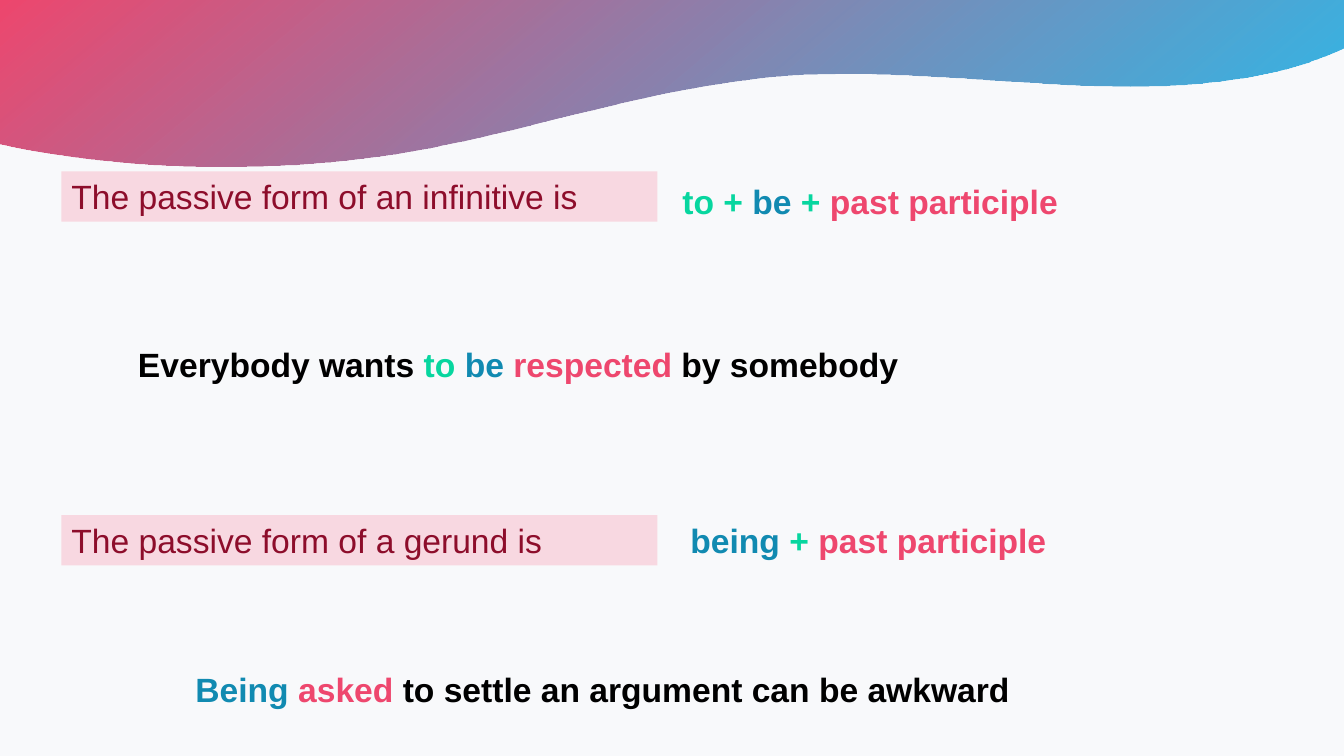
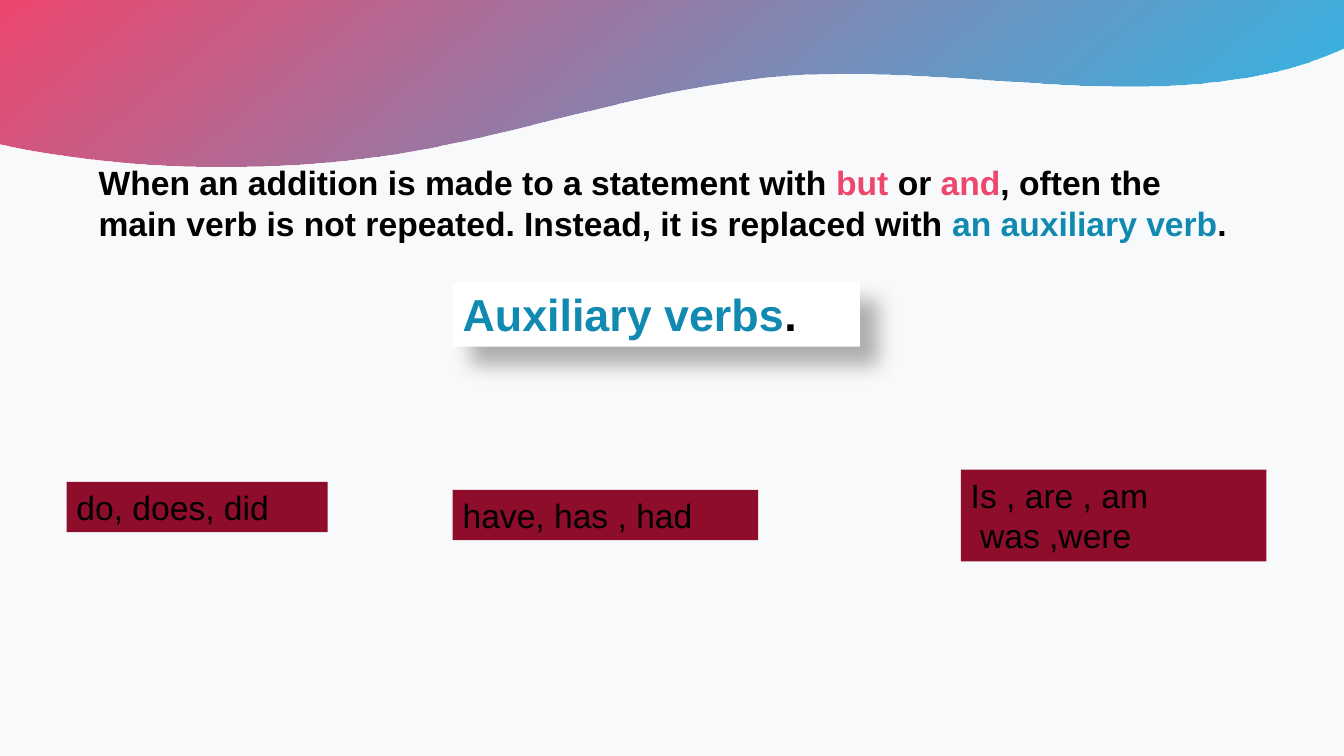
from lxml.etree import SubElement
from pptx import Presentation
from pptx.dml.color import RGBColor
from pptx.enum.shapes import MSO_SHAPE
from pptx.enum.text import MSO_ANCHOR, MSO_AUTO_SIZE, PP_ALIGN
from pptx.oxml.ns import qn
from pptx.util import Inches, Pt

BLACK, WHITE, PAPER = "000000", "FFFFFF", "F8F9FB"
RED, SKY, BLUE, GREEN = "EE476E", "16B3E8", "118AB1", "07D69F"
WINE, PINK = "8D0D2B", "F8B5C5"
FONT = "Arial"
CURVES = [
    [(0, 1.43), (1.22, 1.69), (2.66, 1.73), (3.93, 1.53)],
    [(3.93, 1.53), (5.3, 1.31), (6.48, 0.84), (7.92, 0.75)],
    [(7.92, 0.75), (9.36, 0.67), (10.88, 1), (12.27, 0.79)],
    [(12.27, 0.79), (12.67, 0.73), (13.04, 0.62), (13.33, 0.48)],
]
STEPS = 24


def rgb(code):
    return RGBColor.from_string(code)


def fade(node, share):
    for color in node.iter(qn("a:srgbClr")):
        SubElement(color, qn("a:alpha"), val=str(share * 1000))


def bezier(curve, t):
    u = 1 - t
    parts = (u ** 3, 3 * u * u * t, 3 * u * t * t, t ** 3)
    return tuple(Inches(sum(w * p[axis] for w, p in zip(parts, curve)))
                 for axis in (0, 1))


def add_wave(slide):
    edge = [bezier(c, i / STEPS) for c in CURVES for i in range(STEPS + 1)]
    pen = slide.shapes.build_freeform(0, 0, scale=1.0)
    pen.add_line_segments(edge + [(Inches(13.33), 0)], close=True)
    wave = pen.convert_to_shape()
    wave.shadow.inherit = False
    wave.line.fill.background()
    wave.fill.gradient()
    wave.fill.gradient_angle = 310
    first, last = wave.fill.gradient_stops
    first.color.rgb, last.color.rgb = rgb(RED), rgb(SKY)
    first.position, last.position = 0, 1
    stops = list(wave.element.spPr.iter(qn("a:gs")))
    fade(stops[-1], 90)


def write(shape, lines, size=24, bold=False):
    frame = shape.text_frame
    frame.word_wrap = True
    frame.auto_size = MSO_AUTO_SIZE.SHAPE_TO_FIT_TEXT
    frame.vertical_anchor = MSO_ANCHOR.TOP
    for i, line in enumerate(lines):
        para = frame.add_paragraph() if i else frame.paragraphs[0]
        para.alignment = PP_ALIGN.LEFT
        para.font.name, para.font.size = FONT, Pt(size)
        para.font.bold = bold
        for text, color in line:
            run = para.add_run()
            run.text = text
            run.font.color.rgb = rgb(color)


def add_text(slide, at, *runs):
    box = slide.shapes.add_textbox(*map(Inches, at))
    write(box, [runs], bold=True)


def add_box(slide, at, fill, lines, **style):
    box = slide.shapes.add_shape(MSO_SHAPE.RECTANGLE, *map(Inches, at))
    box.shadow.inherit = False
    box.fill.solid()
    box.fill.fore_color.rgb = rgb(fill)
    box.line.fill.background()
    write(box, lines, **style)
    return box


def add_label(slide, top, text):
    box = add_box(slide, (0.61, top, 5.91, 0.5), PINK, [[(text, WINE)]])
    fade(box.element.spPr, 48)


def add_shadow(shape):
    effects = shape.element.spPr.find(qn("a:effectLst"))
    shadow = SubElement(effects, qn("a:outerShdw"), blurRad=str(Pt(15)),
                        dist=str(Pt(18)), dir=str(45 * 60000),
                        algn="tl", rotWithShape="0")
    SubElement(shadow, qn("a:srgbClr"), val=BLACK)
    fade(shadow, 30)


def add_slide(deck):
    slide = deck.slides.add_slide(deck.slide_layouts[6])
    add_wave(slide)
    return slide


def passive_forms(slide):
    add_label(slide, 1.7, "The passive form of an infinitive is")
    add_text(slide, (6.67, 1.75, 5.07, 0.5), ("to + ", GREEN), ("be", BLUE),
             (" + ", GREEN), ("past participle", RED))
    add_text(slide, (1.27, 3.36, 8.02, 0.5), ("Everybody wants ", BLACK),
             ("to ", GREEN), ("be ", BLUE), ("respected ", RED),
             ("by somebody", BLACK))
    add_label(slide, 5.11, "The passive form of a gerund is")
    add_text(slide, (6.75, 5.11, 5.07, 0.5), ("being", BLUE),
             (" + ", GREEN), ("past participle", RED))
    add_text(slide, (1.84, 6.59, 8.99, 0.5), ("Being ", BLUE),
             ("asked", RED),
             (" to settle an argument can be awkward", BLACK))


def helper_verbs(slide):
    add_text(slide, (0.88, 1.56, 11.57, 0.91),
             ("When an addition is made to a statement with ", BLACK),
             ("but", RED), (" or ", BLACK), ("and", RED),
             (", often the main verb is not repeated. "
              "Instead, it is replaced with ", BLACK),
             ("an auxiliary verb", BLUE), (".", BLACK))
    head = add_box(slide, (4.49, 2.8, 4.04, 0.64), WHITE,
                   [[("Auxiliary verbs", BLUE), (".", BLACK)]],
                   size=32, bold=True)
    add_shadow(head)
    groups = [
        ((0.66, 4.78, 2.59, 0.5), ["do, does, did"]),
        ((4.49, 4.86, 3.03, 0.5), ["have, has , had"]),
        ((9.53, 4.66, 3.03, 0.91), ["Is , are , am", " was ,were"]),
    ]
    for at, lines in groups:
        add_box(slide, at, WINE, [[(line, BLACK)] for line in lines])


def main():
    deck = Presentation()
    deck.slide_width, deck.slide_height = Inches(13.33), Inches(7.5)
    paper = deck.slide_master.background.fill
    paper.solid()
    paper.fore_color.rgb = rgb(PAPER)
    for build in (passive_forms, helper_verbs):
        build(add_slide(deck))
    deck.save("out.pptx")


if __name__ == "__main__":
    main()
